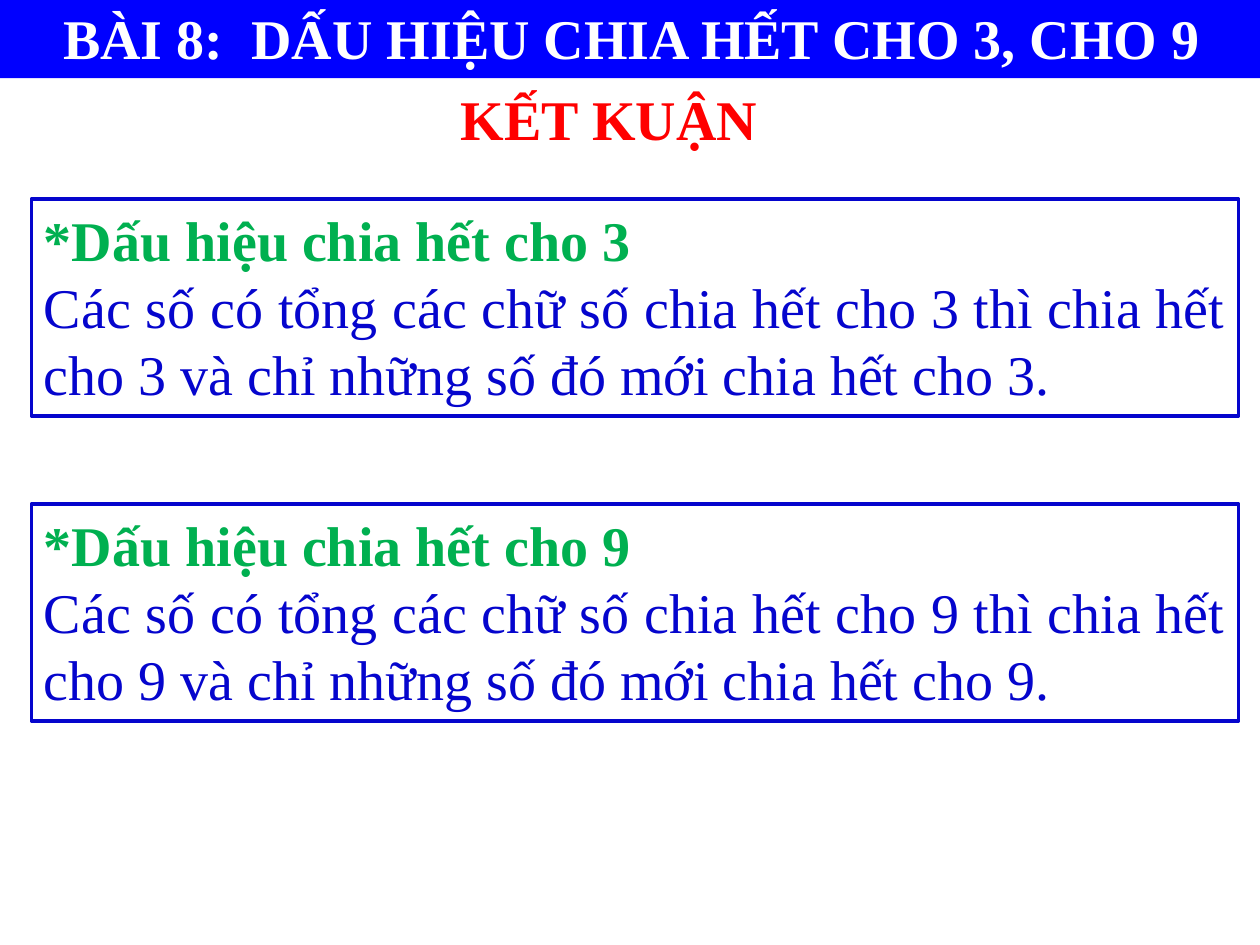
from pptx import Presentation
from pptx.dml.color import RGBColor
from pptx.enum.shapes import MSO_SHAPE
from pptx.enum.text import MSO_ANCHOR, MSO_AUTO_SIZE, PP_ALIGN
from pptx.util import Inches, Pt

RECT = MSO_SHAPE.RECTANGLE
TOP = MSO_ANCHOR.TOP
NO_FIT = MSO_AUTO_SIZE.NONE
LEFT, CENTER, JUSTIFY = PP_ALIGN.LEFT, PP_ALIGN.CENTER, PP_ALIGN.JUSTIFY

WHITE = RGBColor(0xFF, 0xFF, 0xFF)
RED = RGBColor(0xFF, 0x00, 0x00)
GREEN = RGBColor(0x00, 0xB0, 0x50)
BLUE = RGBColor(0x00, 0x00, 0xFF)
NAVY = RGBColor(0x05, 0x05, 0xCD)

# Content
TITLE = "BÀI 8:  DẤU HIỆU CHIA HẾT CHO 3, CHO 9"
SUBTITLE = "KẾT KUẬN"
DIVISORS = [3, 9]
RULE_HEADING = "*Dấu hiệu chia hết cho {n}"
RULE_TEXT = ("Các số có tổng các chữ số chia hết cho {n} thì chia hết cho {n} "
             "và chỉ những số đó mới chia hết cho {n}.")

# Layout of the rule boxes, in inches
BOX_LEFT, BOX_TOP, BOX_WIDTH, BOX_HEIGHT = 0.25, 1.58, 9.58, 1.72
BOX_STEP = 2.42


def write(sp, lines, align):
    """Fill a shape with (text, colour, bold) lines."""
    tf = sp.text_frame
    tf.word_wrap = True
    tf.auto_size = NO_FIT
    tf.vertical_anchor = TOP
    for i, (text, color, bold) in enumerate(lines):
        p = tf.add_paragraph() if i else tf.paragraphs[0]
        p.text = text
        p.alignment = align
        p.line_spacing = 1.0
        p.space_before = Pt(0)
        p.font.name = "Times New Roman"
        p.font.size = Pt(32)
        p.font.bold = bold
        p.font.color.rgb = color


prs = Presentation()
prs.slide_width, prs.slide_height = Inches(10), Inches(7.5)
s = prs.slides.add_slide(prs.slide_layouts[5])

# Title banner
title = s.shapes.title
title.left, title.top = Inches(0), Inches(-0.02)
title.width, title.height = Inches(10.03), Inches(0.64)
title.fill.solid()
title.fill.fore_color.rgb = BLUE
write(title, [(TITLE, WHITE, True)], CENTER)

# Subtitle
subtitle = s.shapes.add_textbox(Inches(3.56), Inches(0.62), Inches(3.23), Inches(0.64))
write(subtitle, [(SUBTITLE, RED, True)], LEFT)

# Rule boxes
for i, n in enumerate(DIVISORS):
    sp = s.shapes.add_shape(RECT, Inches(BOX_LEFT), Inches(BOX_TOP + i * BOX_STEP),
                            Inches(BOX_WIDTH), Inches(BOX_HEIGHT))
    sp.shadow.inherit = False
    sp.fill.background()
    sp.line.color.rgb = NAVY
    sp.line.width = Pt(2.25)
    write(sp, [(RULE_HEADING.format(n=n), GREEN, True),
               (RULE_TEXT.format(n=n), NAVY, False)], JUSTIFY)

prs.save("out.pptx")
